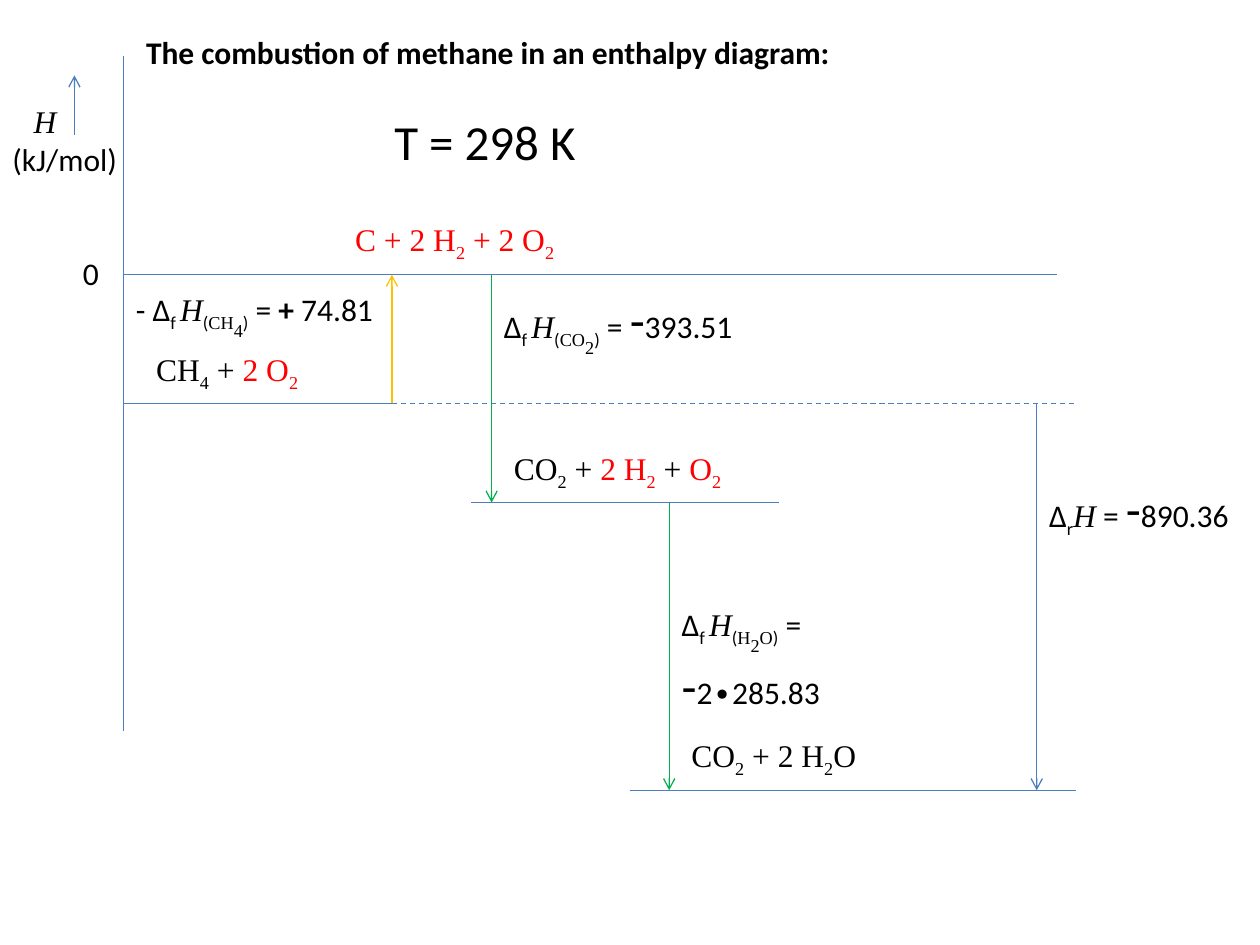
from dataclasses import dataclass, replace
from typing import Optional

from lxml.etree import SubElement
from pptx import Presentation
from pptx.dml.color import RGBColor
from pptx.enum.dml import MSO_LINE_DASH_STYLE as Dash
from pptx.enum.shapes import MSO_CONNECTOR_TYPE as Connector
from pptx.enum.text import MSO_ANCHOR as Anchor, MSO_AUTO_SIZE as AutoSize, PP_ALIGN as Align
from pptx.oxml.ns import qn
from pptx.util import Cm, Pt

BLACK, RED, BLUE, GREEN, ORANGE = "000000", "FF0000", "4B7EBC", "00B050", "FFC000"
SANS, SERIF = "Calibri", "Times New Roman"
AXIS_X, METHANE_END, CARBON_X, WATER_X, REACTION_X, LEVEL_END = 2.49, 7.9, 9.91, 13.49, 20.9, 21.69
ELEMENTS_Y, METHANE_Y, DIOXIDE_Y, PRODUCTS_Y = 5.54, 8.13, 10.13, 15.93


@dataclass(frozen=True)
class Run:
    text: str
    font: str = SANS
    color: str = BLACK
    size: int = 18
    baseline: int = 0
    bold: bool = False
    italic: bool = False


@dataclass(frozen=True)
class Line:
    start: tuple[float, float]
    end: tuple[float, float]
    color: str = BLUE
    arrow: bool = False
    dashed: bool = False


@dataclass(frozen=True)
class Paragraph:
    runs: list[Run]
    indent: float = 0
    space_before: float = 0


@dataclass(frozen=True)
class Label:
    left: float
    top: float
    width: float
    paragraphs: list[Paragraph]
    height: float = 1.02


def rgb(value: str) -> RGBColor:
    return RGBColor.from_string(value)


def formula(text: str, color: str = BLACK, baseline: int = 0) -> list[Run]:
    first, *rest = text.split("_")
    plain = Run(first, SERIF, color, baseline=baseline)
    runs = [plain]
    for part in rest:
        runs.append(replace(plain, text=part[0], baseline=baseline - 25))
        if part[1:]:
            runs.append(replace(plain, text=part[1:]))
    return runs


def enthalpy(kind: str, species: Optional[str] = None, sign: str = "") -> list[Run]:
    runs = [Run(sign + "Δ"), Run(kind, baseline=-25), Run("H", SERIF, italic=True)]
    if species:
        runs += [Run("(", baseline=-25), *formula(species, baseline=-25), Run(")", baseline=-25)]
    return runs + [Run(" = ")]


def negative(value: str) -> list[Run]:
    return [Run("-", size=28), Run(value)]


def label(left: float, top: float, width: float, runs: list[Run], height: float = 1.02) -> Label:
    return Label(left, top, width, [Paragraph(runs)], height)


def write_run(paragraph, piece: Run) -> None:
    run = paragraph.add_run()
    run.text = piece.text
    formats = {"name": piece.font, "size": Pt(piece.size), "bold": piece.bold, "italic": piece.italic}
    for attribute, value in formats.items():
        setattr(run.font, attribute, value)
    run.font.color.rgb = rgb(piece.color)
    if piece.baseline:
        run.font._element.set("baseline", str(piece.baseline * 1000))


def draw_line(slide, line: Line) -> None:
    connector = slide.shapes.add_connector(Connector.STRAIGHT, *map(Cm, line.start + line.end))
    connector.line.color.rgb = rgb(line.color)
    connector.line.width = Pt(0.75)
    if line.dashed:
        connector.line.dash_style = Dash.DASH
    if line.arrow:
        SubElement(connector.line._get_or_add_ln(), qn("a:tailEnd"), type="arrow")
    SubElement(connector._element.spPr, qn("a:effectLst"))


def draw_label(slide, item: Label) -> None:
    box = slide.shapes.add_textbox(*map(Cm, (item.left, item.top, item.width, item.height)))
    frame = box.text_frame
    for attribute, value in {"word_wrap": True, "auto_size": AutoSize.SHAPE_TO_FIT_TEXT}.items():
        setattr(frame, attribute, value)
    for index, content in enumerate(item.paragraphs):
        paragraph = frame.add_paragraph() if index else frame.paragraphs[0]
        paragraph.space_before = Pt(content.space_before)
        paragraph._p.get_or_add_pPr().set("marL", str(Cm(content.indent)))
        for piece in content.runs:
            write_run(paragraph, piece)


def write_title(slide, text: str) -> None:
    title = slide.shapes.title
    place = {"left": Cm(2.69), "top": Cm(0.53), "width": Cm(14.43), "height": Cm(1.02)}
    layout = {"word_wrap": False, "auto_size": AutoSize.NONE, "vertical_anchor": Anchor.TOP}
    for target, formats in ((title, place), (title.text_frame, layout)):
        for attribute, value in formats.items():
            setattr(target, attribute, value)
    heading = title.text_frame.paragraphs[0]
    heading.alignment = Align.LEFT
    write_run(heading, Run(text, bold=True))


LINES = [
    Line((AXIS_X, 1.12), (AXIS_X, 14.73)),
    Line((1.5, 2.72), (1.5, 1.52), arrow=True),
    Line((AXIS_X, ELEMENTS_Y), (21.31, ELEMENTS_Y)),
    Line((AXIS_X, METHANE_Y), (METHANE_END, METHANE_Y)),
    Line((METHANE_END, METHANE_Y), (LEVEL_END, METHANE_Y), dashed=True),
    Line((9.5, DIOXIDE_Y), (15.7, DIOXIDE_Y)),
    Line((12.7, PRODUCTS_Y), (LEVEL_END, PRODUCTS_Y)),
    Line((METHANE_END, METHANE_Y), (METHANE_END, ELEMENTS_Y), ORANGE, arrow=True),
    Line((CARBON_X, ELEMENTS_Y), (CARBON_X, DIOXIDE_Y), GREEN, arrow=True),
    Line((WATER_X, DIOXIDE_Y), (WATER_X, PRODUCTS_Y), GREEN, arrow=True),
    Line((REACTION_X, METHANE_Y), (REACTION_X, PRODUCTS_Y), arrow=True),
]

LABELS = [
    Label(0, 1.93, 2.69, [
        Paragraph([Run("H", SERIF, italic=True)], indent=0.43),
        Paragraph([Run("(kJ/mol)")]),
        Paragraph([Run("0")], indent=1.42, space_before=43.5),
    ], 4.11),
    label(7.7, 2.13, 8, [Run("T = 298 K", size=28)], 1.45),
    label(6.91, 4.32, 7.8, formula("C + 2 H_2 + 2 O_2", RED)),
    label(2.9, 6.93, 7.01, formula("CH_4 + ") + formula("2 O_2", RED)),
    label(10.11, 8.92, 7.8,
          formula("CO_2 + ") + formula("2 H_2", RED) + formula(" + ") + formula("O_2", RED)),
    label(13.69, 14.71, 7.8, formula("CO_2 + 2 H_2O")),
    label(AXIS_X, 5.72, 6.4,
          enthalpy("f ", "CH_4", sign="- ") + [Run("+", bold=True), Run(" 74.81")]),
    label(CARBON_X, 5.72, 6.2, enthalpy("f ", "CO_2") + negative("393.51"), 1.45),
    label(WATER_X, 12.07, 5.79, enthalpy("f ", "H_2O") + negative("2∙285.83"), 1.45),
    label(REACTION_X, 9.53, 4.5, enthalpy("r") + negative("890.36"), 1.45),
]


def main() -> None:
    deck = Presentation()
    deck.slide_width, deck.slide_height = Cm(25.4), Cm(19.05)
    slide = deck.slides.add_slide(deck.slide_layouts[5])
    write_title(slide, "The combustion of methane in an enthalpy diagram:")
    for line in LINES:
        draw_line(slide, line)
    for item in LABELS:
        draw_label(slide, item)
    deck.save("out.pptx")


if __name__ == "__main__":
    main()
